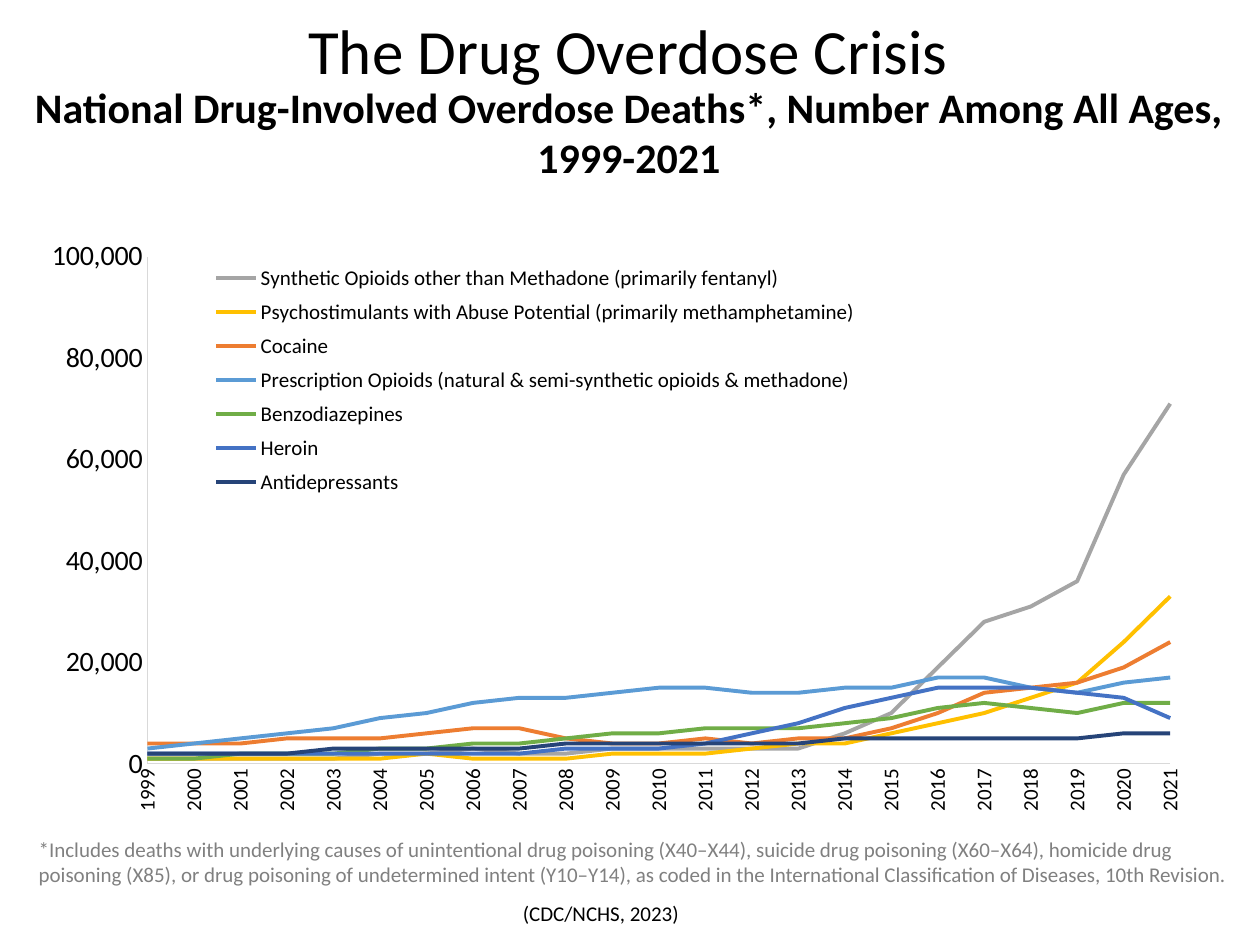
"""Build a slide with a line chart of overdose deaths by drug, 1999-2021."""
from pptx import Presentation
from pptx.chart.data import CategoryChartData
from pptx.dml.color import RGBColor
from pptx.enum.chart import XL_CHART_TYPE, XL_LEGEND_POSITION, XL_MARKER_STYLE, XL_TICK_MARK
from pptx.enum.text import MSO_ANCHOR, PP_ALIGN
from pptx.oxml import parse_xml
from pptx.oxml.ns import nsdecls, qn
from pptx.util import Cm, Pt

LINE = XL_CHART_TYPE.LINE
RIGHT = XL_LEGEND_POSITION.RIGHT
PLAIN = XL_MARKER_STYLE.NONE
NO_TICK = XL_TICK_MARK.NONE
TOP, MIDDLE, BOTTOM = MSO_ANCHOR.TOP, MSO_ANCHOR.MIDDLE, MSO_ANCHOR.BOTTOM
LEFT, CENTER = PP_ALIGN.LEFT, PP_ALIGN.CENTER

FONT = "Calibri"
BLACK = RGBColor(0x00, 0x00, 0x00)
GRAY = RGBColor(0x80, 0x80, 0x80)
PALE = RGBColor(0xD9, 0xD9, 0xD9)
SILVER = RGBColor(0xA5, 0xA5, 0xA5)
GOLD = RGBColor(0xFF, 0xC0, 0x00)
ORANGE = RGBColor(0xED, 0x7D, 0x31)
SKY = RGBColor(0x5B, 0x9B, 0xD5)
GREEN = RGBColor(0x70, 0xAD, 0x47)
BLUE = RGBColor(0x44, 0x72, 0xC4)
NAVY = RGBColor(0x26, 0x44, 0x78)

TITLE = "The Drug Overdose Crisis"
HEADING = "National Drug-Involved Overdose Deaths*, Number Among All Ages, 1999-2021"
NOTE = (
    "*Includes deaths with underlying causes of unintentional drug poisoning (X40–X44), "
    "suicide drug poisoning (X60–X64), homicide drug poisoning (X85), or drug poisoning of "
    "undetermined intent (Y10–Y14), as coded in the International Classification of Diseases, "
    "10th Revision."
)
SOURCE = "(CDC/NCHS, 2023)"

YEARS = range(1999, 2022)
THOUSANDS = [
    ("Synthetic Opioids other than Methadone (primarily fentanyl)", SILVER,
     [1, 1, 1, 1, 1, 2, 2, 3, 2, 2, 3, 3, 3, 3, 3, 6, 10, 19, 28, 31, 36, 57, 71]),
    ("Psychostimulants with Abuse Potential (primarily methamphetamine)", GOLD,
     [1, 1, 1, 1, 1, 1, 2, 1, 1, 1, 2, 2, 2, 3, 4, 4, 6, 8, 10, 13, 16, 24, 33]),
    ("Cocaine", ORANGE,
     [4, 4, 4, 5, 5, 5, 6, 7, 7, 5, 4, 4, 5, 4, 5, 5, 7, 10, 14, 15, 16, 19, 24]),
    ("Prescription Opioids (natural & semi-synthetic opioids & methadone)", SKY,
     [3, 4, 5, 6, 7, 9, 10, 12, 13, 13, 14, 15, 15, 14, 14, 15, 15, 17, 17, 15, 14, 16, 17]),
    ("Benzodiazepines", GREEN,
     [1, 1, 2, 2, 2, 3, 3, 4, 4, 5, 6, 6, 7, 7, 7, 8, 9, 11, 12, 11, 10, 12, 12]),
    ("Heroin", BLUE,
     [2, 2, 2, 2, 2, 2, 2, 2, 2, 3, 3, 3, 4, 6, 8, 11, 13, 15, 15, 15, 14, 13, 9]),
    ("Antidepressants", NAVY,
     [2, 2, 2, 2, 3, 3, 3, 3, 3, 4, 4, 4, 4, 4, 4, 5, 5, 5, 5, 5, 5, 6, 6]),
]


def style(font, size, color=BLACK, bold=False):
    font.name, font.size, font.bold = FONT, Pt(size), bold
    font.color.rgb = color


def write(slide, text, at, size=12, color=BLACK, bold=False, align=LEFT,
          anchor=TOP, wrap=True, space=None):
    box = slide.shapes.add_textbox(*map(Cm, at))
    frame = box.text_frame
    frame.word_wrap, frame.vertical_anchor = wrap, anchor
    para = frame.paragraphs[0]
    para.alignment, para.line_spacing = align, space
    run = para.add_run()
    run.text = text
    style(run.font, size, color, bold)


def place(part, index, rect, inner=False):
    for old in part.findall(qn("c:layout")):
        part.remove(old)
    target = '<c:layoutTarget val="inner"/>' if inner else ""
    modes = '<c:xMode val="edge"/><c:yMode val="edge"/>'
    sizes = "".join(f'<c:{key} val="{val}"/>' for key, val in zip("xywh", rect))
    part.insert(index, parse_xml(
        f'<c:layout {nsdecls("c")}><c:manualLayout>{target}{modes}{sizes}'
        "</c:manualLayout></c:layout>"))


def plot(slide, at):
    data = CategoryChartData(number_format="#,##0")
    data.categories = [str(year) for year in YEARS]
    for name, _, vals in THOUSANDS:
        data.add_series(name, [val * 1000 for val in vals])
    chart = slide.shapes.add_chart(LINE, *map(Cm, at), data).chart
    style(chart.font, 16)
    chart.has_title = False
    chart.plots[0].vary_by_categories = False
    for series, (_, color, _) in zip(chart.plots[0].series, THOUSANDS):
        series.smooth = False
        series.marker.style = PLAIN
        series.format.line.width = Pt(2.25)
        series.format.line.color.rgb = color

    years, deaths = chart.category_axis, chart.value_axis
    for axis, size in ((years, 12), (deaths, 16)):
        axis.major_tick_mark = axis.minor_tick_mark = NO_TICK
        axis.has_major_gridlines = False
        axis.format.line.color.rgb = PALE
        axis.format.line.width = Pt(0.75)
        style(axis.tick_labels.font, size)
        axis.tick_labels.number_format = "#,##0"
        axis.tick_labels.number_format_is_linked = False
    deaths.minimum_scale, deaths.maximum_scale, deaths.major_unit = 0, 100000, 20000
    body = years._element.find(qn("c:txPr")).find(qn("a:bodyPr"))
    body.set("rot", "-5400000")
    body.set("vert", "horz")
    deaths._element.find(qn("c:crosses")).addnext(
        parse_xml(f'<c:crossBetween {nsdecls("c")} val="midCat"/>'))

    chart.has_legend = True
    legend = chart.legend
    legend.position, legend.include_in_layout = RIGHT, True
    style(legend.font, 12)
    place(legend._element, 1, (0.13, 0.03, 0.58, 0.4))
    area = chart._chartSpace.find(qn("c:chart")).find(qn("c:plotArea"))
    place(area, 0, (0.09, 0.03, 0.87, 0.82), inner=True)


def main():
    deck = Presentation()
    deck.slide_width, deck.slide_height = Cm(25.4), Cm(19.05)
    slide = deck.slides.add_slide(deck.slide_layouts[6])
    write(slide, HEADING, (0.23, 0.81, 24.9, 3.68), size=24, bold=True,
          align=CENTER, anchor=MIDDLE)
    write(slide, TITLE, (0.53, -0.25, 24.26, 2.16), size=36,
          align=CENTER, anchor=BOTTOM, space=0.9)
    plot(slide, (0.84, 4.8, 23.7, 12.47))
    write(slide, NOTE, (0.53, 16.74, 24.54, 1.27), color=GRAY)
    write(slide, SOURCE, (10.29, 18.03, 3.71, 0.76), wrap=False)
    deck.save("out.pptx")


if __name__ == "__main__":
    main()
